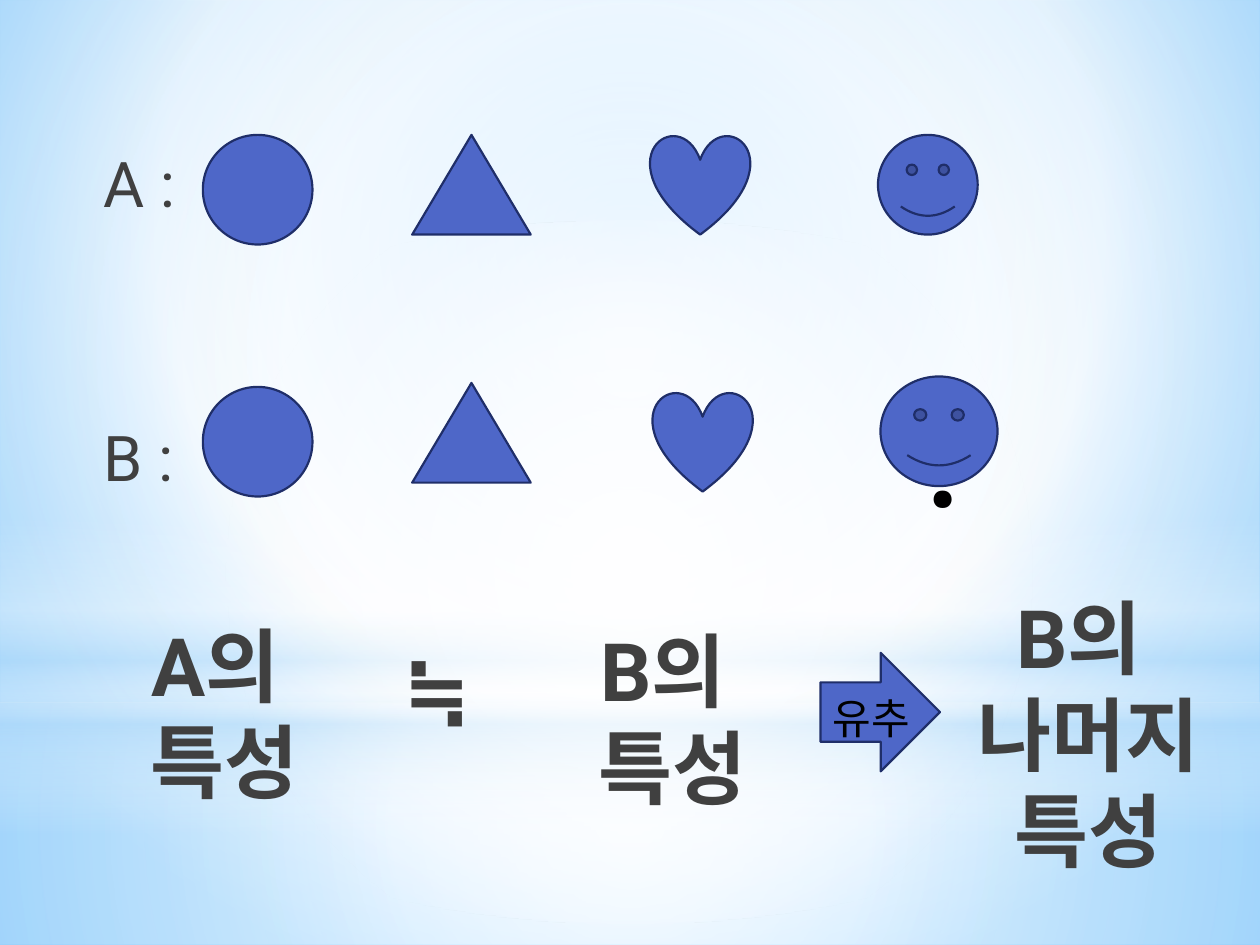
import dataclasses
import typing

import lxml.etree
import pptx
import pptx.dml.color
import pptx.enum.shapes
import pptx.enum.text
import pptx.oxml
import pptx.oxml.ns
import pptx.util

Cm = pptx.util.Cm
Pt = pptx.util.Pt
Kind = pptx.enum.shapes.MSO_SHAPE
Align = pptx.enum.text.PP_ALIGN
Rgb = pptx.dml.color.RGBColor.from_string


@dataclasses.dataclass(frozen=True)
class Theme:
    fill: str = "4E67C8"
    edge: str = "1F2E69"
    gray: str = "404040"
    black: str = "000000"
    white: str = "FFFFFF"
    pale: str = "B4DCFA"
    sky: str = "9ED5FF"
    deep: str = "5BB9FF"
    font: str = "Roboto"
    sign: str = "Noto Sans CJK KR"
    head: int = 46
    label: int = 36
    small: int = 24
    huge: int = 96
    line: float = 1.25


THEME = Theme()


class Box(typing.NamedTuple):
    left: float
    top: float
    width: float
    height: float

    def size(self) -> list:
        return [Cm(side) for side in self]


class Stop(typing.NamedTuple):
    place: int
    color: str
    alpha: int = 100


class Glow(typing.NamedTuple):
    kind: Kind
    box: Box
    stops: list
    focus: tuple | None = (50, 50, 50, 50)


class Form(typing.NamedTuple):
    kind: Kind
    box: Box


class Note(typing.NamedTuple):
    text: str
    box: Box
    size: int = THEME.head
    font: str = THEME.font
    color: str = THEME.gray
    bold: bool = True
    align: Align = Align.CENTER


WHITE, PALE = THEME.white, THEME.pale
BACK = [Stop(0, THEME.sky), Stop(60, WHITE), Stop(100, THEME.deep)]
PANEL = [Stop(0, WHITE, 91), Stop(37, WHITE, 76), Stop(100, PALE, 79)]
UPPER = [Stop(0, WHITE, 89), Stop(48, WHITE, 62), Stop(100, PALE, 79)]
BAND = [Stop(0, WHITE, 0), Stop(29, WHITE, 30), Stop(45, PALE, 40),
        Stop(55, WHITE, 26), Stop(65, PALE, 60), Stop(100, WHITE, 0)]
HALO = [Stop(0, WHITE), Stop(56, WHITE, 0)]

GLOWS = [
    Glow(Kind.RECTANGLE, Box(0, 14.17, 25.4, 4.88), PANEL),
    Glow(Kind.RECTANGLE, Box(0, 0, 25.4, 14.17), UPPER),
    Glow(Kind.RECTANGLE, Box(0, 10.46, 25.4, 6.35), BAND, None),
    Glow(Kind.OVAL, Box(0, 4.45, 25.4, 14.17), HALO),
]
FORMS = [
    Form(Kind.OVAL, Box(4.09, 2.72, 2.21, 2.21)),
    Form(Kind.ISOSCELES_TRIANGLE, Box(8.31, 2.72, 2.39, 2.01)),
    Form(Kind.HEART, Box(13.11, 2.72, 2.01, 2.01)),
    Form(Kind.SMILEY_FACE, Box(17.7, 2.72, 2.01, 2.01)),
    Form(Kind.OVAL, Box(4.09, 7.8, 2.21, 2.21)),
    Form(Kind.ISOSCELES_TRIANGLE, Box(8.31, 7.72, 2.39, 2.01)),
    Form(Kind.HEART, Box(13.16, 7.9, 2.01, 2.01)),
]
QUERY = Note("?", Box(18.01, 6.71, 2.39, 4.37), THEME.huge,
             color=THEME.black, bold=False, align=Align.LEFT)
COVER = Form(Kind.SMILEY_FACE, Box(17.75, 7.59, 2.36, 2.21))
HEADS = [
    Note("A의 \n특성", Box(1.5, 12.29, 6.07, 3.18)),
    Note("B의 \n특성", Box(10.52, 12.4, 6.07, 3.18)),
    Note("≒", Box(6.68, 12.75, 4.27, 3.18), font=THEME.sign),
    Note("B의 \n나머지특성", Box(18.9, 11.73, 6.07, 3.18)),
]
ARROW = Form(Kind.RIGHT_ARROW, Box(16.54, 13.16, 2.41, 2.39))
INFER = Note("유추", Box(16.54, 13.84, 2.39, 1.27), THEME.small,
             color=THEME.black, bold=False, align=Align.LEFT)


def blend(root, stops: list, focus: tuple | None) -> None:
    marks = "".join(
        f'<a:gs pos="{stop.place * 1000}"><a:srgbClr val="{stop.color}">'
        f'<a:alpha val="{stop.alpha * 1000}"/></a:srgbClr></a:gs>'
        for stop in stops)
    if focus:
        sides = " ".join(f'{side}="{part * 1000}"'
                         for side, part in zip("ltrb", focus))
        style = f'<a:path path="circle"><a:fillToRect {sides}/></a:path>'
    else:
        style = '<a:lin ang="5400000" scaled="0"/>'
    space = pptx.oxml.ns.nsdecls("a")
    grad = pptx.oxml.parse_xml(
        f'<a:gradFill {space} rotWithShape="1"><a:gsLst>{marks}</a:gsLst>'
        f'{style}</a:gradFill>')
    old = root.find(".//" + pptx.oxml.ns.qn("a:solidFill"))
    old.getparent().replace(old, grad)


def add_glow(shapes, glow: Glow) -> None:
    shape = shapes.add_shape(glow.kind, *glow.box.size())
    shape.shadow.inherit = False
    shape.fill.solid()
    blend(shape.element, glow.stops, glow.focus)
    shape.line.fill.background()


def add_form(shapes, form: Form) -> None:
    shape = shapes.add_shape(form.kind, *form.box.size())
    shape.shadow.inherit = False
    shape.fill.solid()
    shape.fill.fore_color.rgb = Rgb(THEME.fill)
    shape.line.color.rgb = Rgb(THEME.edge)
    shape.line.width = Pt(THEME.line)


def add_note(shapes, note: Note):
    frame = shapes.add_textbox(*note.box.size()).text_frame
    frame.word_wrap = True
    para = frame.paragraphs[0]
    para.text = note.text.replace("\n", "\v")
    dress(para, note)
    return frame


def dress(para, note: Note) -> None:
    para.alignment = note.align
    para.font.name = note.font
    para.font.size = Pt(note.size)
    para.font.bold = note.bold
    para.font.color.rgb = Rgb(note.color)


def add_rows(shapes) -> None:
    note = Note("A :", Box(1.7, 1.42, 19.81, 9.65), THEME.label,
                bold=False, align=Align.LEFT)
    frame = add_note(shapes, note)
    frame.margin_top = Cm(1.5)
    frame.margin_left = Cm(0.38)
    para = frame.add_paragraph()
    para.text = "B :"
    para.space_before = Pt(113)
    dress(para, note)


def main() -> None:
    deck = pptx.Presentation()
    deck.slide_width, deck.slide_height = Cm(25.4), Cm(19.05)
    slide = deck.slides.add_slide(deck.slide_layouts[6])
    slide.background.fill.solid()
    blend(slide.element, BACK, (20, 10, 20, 60))
    shapes = slide.shapes
    for glow in GLOWS:
        add_glow(shapes, glow)
    add_rows(shapes)
    for form in FORMS:
        add_form(shapes, form)
    add_note(shapes, QUERY)
    add_form(shapes, COVER)
    for head in HEADS:
        add_note(shapes, head)
    group = shapes.add_group_shape().shapes
    add_form(group, ARROW)
    add_note(group, INFER)
    deck.save("out.pptx")


if __name__ == "__main__":
    main()
